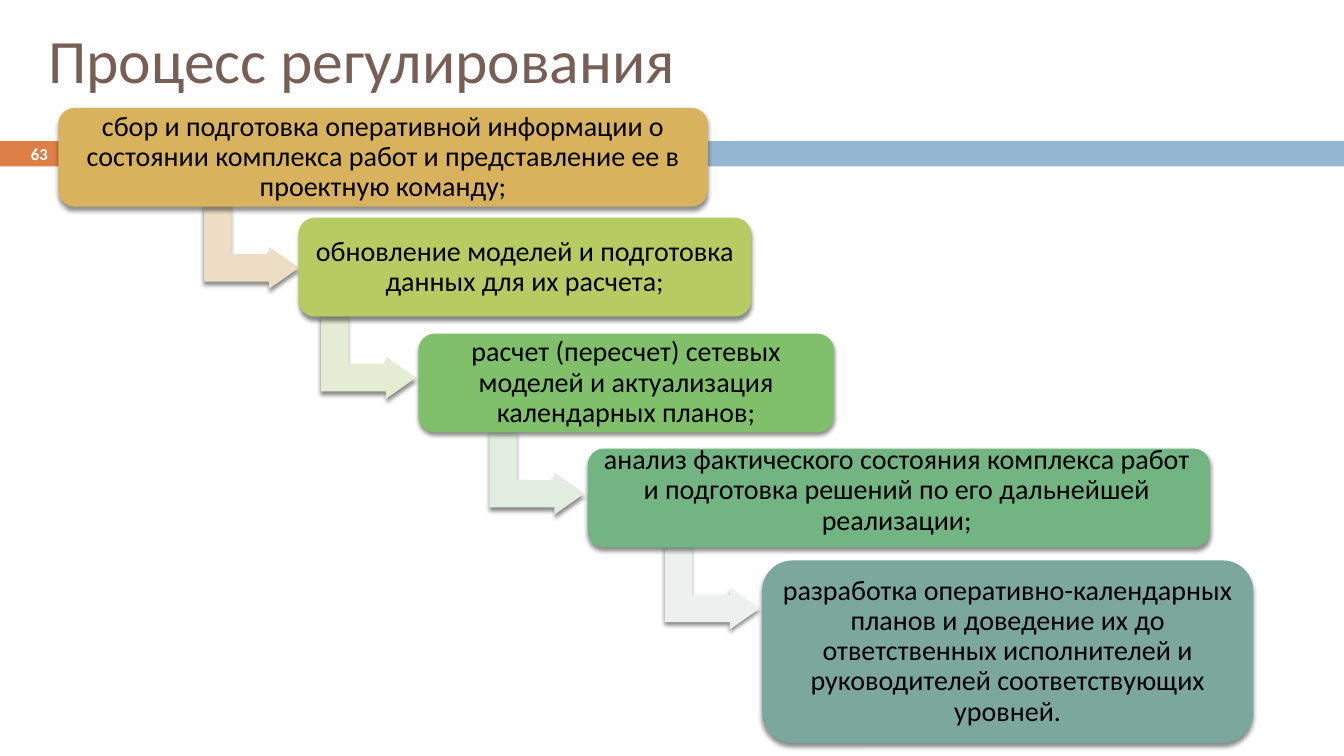
"""Build the slide that shows the regulation process as a staircase of steps."""
import lxml.etree
import pptx
import pptx.dml.color
import pptx.enum.shapes
import pptx.enum.text
import pptx.oxml.ns
import pptx.util

WIDTH, HEIGHT = 13.33, 7.5
FONT = "Calibri"
TITLE = "Процесс регулирования"
PAGE_NUMBER = "63"
STEP_HEIGHT = 0.98
ARROW_WIDTH, ARROW_HEIGHT, ARROW_DROP = 0.83, 0.94, 0.91
ARROW_ADJUSTMENTS = (0.328, 0.25, 0.358)

BANDS = [(0, 0.78, "DD8047"), (0.86, WIDTH - 0.86, "94B6D2")]

# text, left, top, width, height, fill, margins (left, right, bottom)
STEPS = [
    ("сбор и подготовка оперативной информации о состоянии комплекса работ и представление ее в проектную команду;",
     0.58, 1.07, 6.44, STEP_HEIGHT, "D8B25C", (0.09, 0.09, 0)),
    ("обновление моделей и подготовка данных для их расчета;",
     2.96, 2.16, 4.49, STEP_HEIGHT, "B6CC63", (0.1, 0.1, 0)),
    ("расчет (пересчет) сетевых моделей и актуализация календарных планов;",
     4.15, 3.31, 4.12, STEP_HEIGHT, "81C06B", (0.09, 0.09, 0)),
    ("анализ фактического состояния комплекса работ и подготовка решений по его дальнейшей реализации;",
     5.83, 4.45, 6.17, STEP_HEIGHT, "73B483", (0.08, 0.12, 0.14)),
    ("разработка оперативно-календарных планов и доведение их до ответственных исполнителей и руководителей соответствующих уровней.",
     7.56, 5.56, 4.87, 1.81, "7BA79D", (0.06, 0.06, 0)),
]
ARROWS = [(2.08, "EDDDC4"), (3.24, "E4ECD3"), (4.91, "E1EDE1"), (6.65, "ECF1F0")]

SHAPES = pptx.enum.shapes.MSO_SHAPE
CENTER = pptx.enum.text.PP_ALIGN.CENTER
LEFT = pptx.enum.text.PP_ALIGN.LEFT
inches = pptx.util.Inches


def color(value):
    """Turn a hex string into a colour."""
    return pptx.dml.color.RGBColor.from_string(value)


def add_block(slide, preset, left, top, width, height, fill):
    """Add a filled shape without outline or shadow."""
    block = slide.shapes.add_shape(preset, inches(left), inches(top), inches(width), inches(height))
    block.fill.solid()
    block.fill.fore_color.rgb = color(fill)
    block.line.fill.background()
    block.shadow.inherit = False
    return block


def cast_shadow(block):
    """Give a shape a soft shadow below it."""
    qn = pptx.oxml.ns.qn
    effects = block._element.spPr.find(qn("a:effectLst"))
    shadow = lxml.etree.SubElement(
        effects, qn("a:outerShdw"), blurRad=str(pptx.util.Pt(3)), dist=str(pptx.util.Pt(2.4)),
        dir="5400000", rotWithShape="0")
    black = lxml.etree.SubElement(shadow, qn("a:srgbClr"), val="000000")
    lxml.etree.SubElement(black, qn("a:alpha"), val="45000")


def write(holder, text, size, ink, align=CENTER, bold=False, spacing=None):
    """Set one formatted paragraph and return its frame."""
    frame = holder.text_frame
    frame.text = text
    frame.word_wrap = True
    frame.vertical_anchor = pptx.enum.text.MSO_ANCHOR.MIDDLE
    paragraph = frame.paragraphs[0]
    paragraph.alignment = align
    if spacing:
        paragraph.line_spacing = spacing
    font = paragraph.runs[0].font
    font.name, font.size, font.bold = FONT, pptx.util.Pt(size), bold
    font.color.rgb = color(ink)
    return frame


def main():
    """Lay out the slide and save it."""
    deck = pptx.Presentation()
    deck.slide_width, deck.slide_height = inches(WIDTH), inches(HEIGHT)
    slide = deck.slides.add_slide(deck.slide_layouts[5])

    title = slide.shapes.title
    title.left, title.top, title.width, title.height = map(inches, (0.38, 0.12, 12.48, 0.92))
    write(title, TITLE, 44, "775F55", LEFT)

    for left, width, fill in BANDS:
        add_block(slide, SHAPES.RECTANGLE, left, 1.4, width, 0.25, fill)
    page = slide.shapes.add_textbox(0, inches(1.39), inches(0.78), inches(0.27))
    write(page, PAGE_NUMBER, 11.9, "FFFFFF", bold=True)

    for (left, fill), step in zip(ARROWS, STEPS):
        arrow = add_block(slide, SHAPES.BENT_UP_ARROW, left, step[2] + ARROW_DROP,
                          ARROW_WIDTH, ARROW_HEIGHT, fill)
        arrow.rotation = 90
        for index, value in enumerate(ARROW_ADJUSTMENTS):
            arrow.adjustments[index] = value
        cast_shadow(arrow)

    for text, left, top, width, height, fill, margins in STEPS:
        step = add_block(slide, SHAPES.ROUNDED_RECTANGLE, left, top, width, height, fill)
        cast_shadow(step)
        frame = write(step, text, 20, "000000", spacing=0.9)
        frame.margin_top = 0
        frame.margin_left, frame.margin_right, frame.margin_bottom = map(inches, margins)

    deck.save("out.pptx")


if __name__ == "__main__":
    main()
